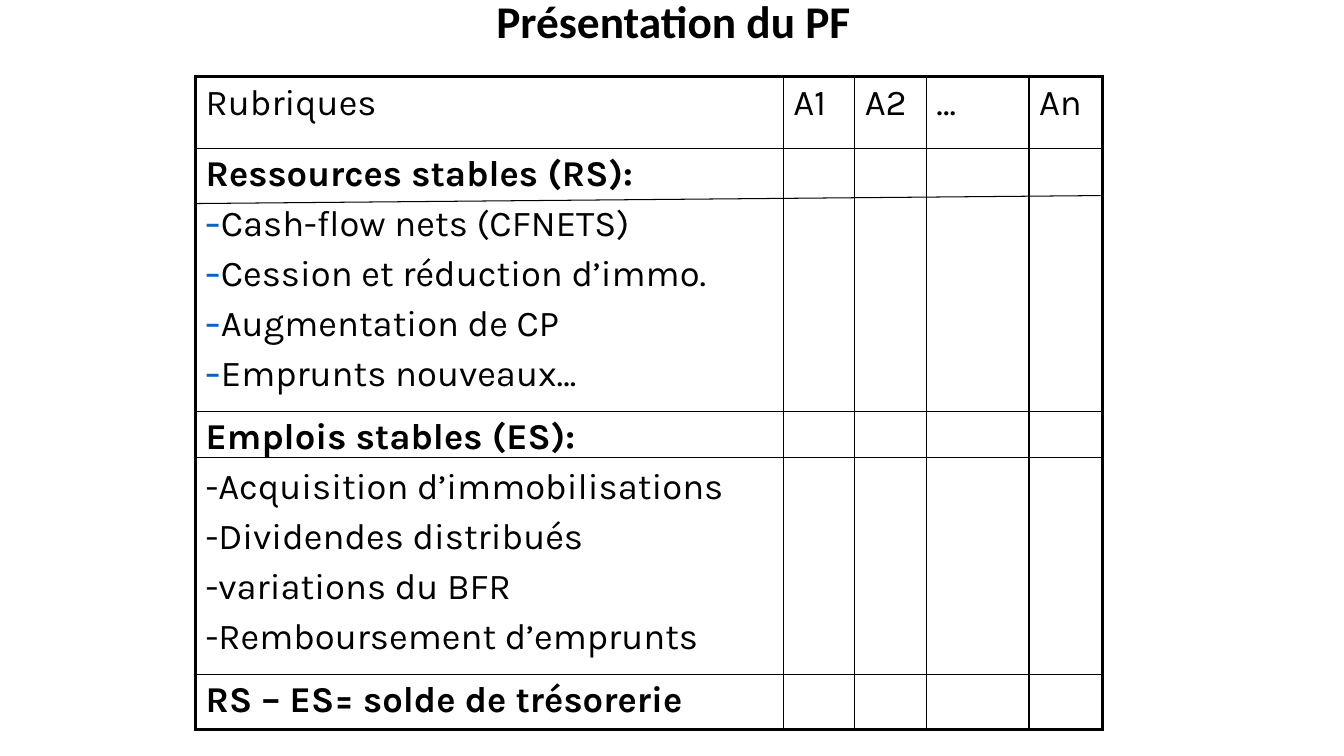
"""Build the slide presenting the financing plan table."""
from lxml import etree
from pptx import Presentation
from pptx.dml.color import RGBColor
from pptx.enum.shapes import MSO_CONNECTOR
from pptx.enum.text import MSO_ANCHOR, PP_ALIGN
from pptx.oxml.ns import qn
from pptx.util import Pt

STRAIGHT = MSO_CONNECTOR.STRAIGHT
MIDDLE = MSO_ANCHOR.MIDDLE
CENTER = PP_ALIGN.CENTER
COLOURS = {"ink": "000000", "dash": "0563C1"}
THIN, THICK = 1, 2.25

HEADINGS = ["Rubriques", "A1", "A2", "…", "An"]
RESOURCES = ["Cash-flow nets (CFNETS)", "Cession et réduction d’immo.",
             "Augmentation de CP", "Emprunts nouveaux…"]
USES = ["-Acquisition d’immobilisations", "-Dividendes distribués",
        "-variations du BFR", "-Remboursement d’emprunts"]
ROWS = [
    HEADINGS,
    ["\n".join(["Ressources stables (RS):"] + RESOURCES)],
    ["\n".join(["Emplois stables (ES):"] + USES)],
    ["RS – ES= solde de trésorerie"],
]
COLUMN_WIDTHS = [419.8, 51.1, 51.1, 73.4, 52.6]
ROW_HEIGHTS = [51.1, 187.9, 187.9, 39.6]
LEFT, TOP, RULE_END = 139.7, 54.7, 786.2


def add_colour(parent, colour):
    etree.SubElement(parent, qn("a:srgbClr"), val=COLOURS[colour])


def format_run(run, font, size, bold):
    run.font.name = font
    run.font.size = Pt(size)
    run.font.bold = bold
    run.font.color.rgb = RGBColor.from_string(COLOURS["ink"])


presentation = Presentation()
presentation.slide_width = Pt(960)
presentation.slide_height = Pt(540)
slide = presentation.slides.add_slide(presentation.slide_layouts[5])

title = slide.shapes.title
title.left, title.top, title.width, title.height = Pt(157), Pt(0), Pt(648), Pt(33.8)
title.text_frame.text = "Présentation du PF"
title.text_frame.vertical_anchor = MIDDLE
heading = title.text_frame.paragraphs[0]
heading.alignment = CENTER
heading.line_spacing = 0.9
format_run(heading.runs[0], "Calibri", 32.4, True)

plan = slide.shapes.add_table(
    len(ROWS), len(HEADINGS), Pt(LEFT), Pt(TOP),
    Pt(sum(COLUMN_WIDTHS)), Pt(sum(ROW_HEIGHTS))).table
plan.first_row = False
plan.horz_banding = False
for column, width in zip(plan.columns, COLUMN_WIDTHS):
    column.width = Pt(width)
for row, height in zip(plan.rows, ROW_HEIGHTS):
    row.height = Pt(height)

last_row, last_column = len(ROWS) - 1, len(HEADINGS) - 1
for r, texts in enumerate(ROWS):
    for c in range(len(HEADINGS)):
        cell = plan.cell(r, c)
        cell.fill.background()
        outer_edges = {"a:lnL": c == 0, "a:lnR": c == last_column,
                       "a:lnT": r == 0, "a:lnB": r == last_row}
        properties = cell._tc.get_or_add_tcPr()
        for position, (edge, outer) in enumerate(outer_edges.items()):
            border = etree.Element(qn(edge), w=str(Pt(THICK if outer else THIN)))
            add_colour(etree.SubElement(border, qn("a:solidFill")), "ink")
            properties.insert(position, border)
        if c >= len(texts):
            continue
        cell.text_frame.text = texts[c]
        for i, entry in enumerate(cell.text_frame.paragraphs):
            entry.space_before = Pt(5.2)
            format_run(entry.runs[0], "Karla", 26, r > 0 and i == 0)
            if entry.text in RESOURCES:
                dash = entry._p.get_or_add_pPr()
                dash.set("marL", "0")
                dash.set("indent", "0")
                add_colour(etree.SubElement(dash, qn("a:buClr")), "dash")
                etree.SubElement(dash, qn("a:buSzPct"), val="120000")
                etree.SubElement(dash, qn("a:buFont"), typeface="Karla")
                etree.SubElement(dash, qn("a:buChar"), char="-")

for start_y, end_y in [(145.4, 139.7), (326.9, 326.9)]:
    rule = slide.shapes.add_connector(
        STRAIGHT, Pt(LEFT), Pt(start_y), Pt(RULE_END), Pt(end_y))
    rule.line.width = Pt(0.75)
    rule.line.color.rgb = RGBColor.from_string(COLOURS["ink"])
    etree.SubElement(rule._element.spPr, qn("a:effectLst"))

presentation.save("out.pptx")
